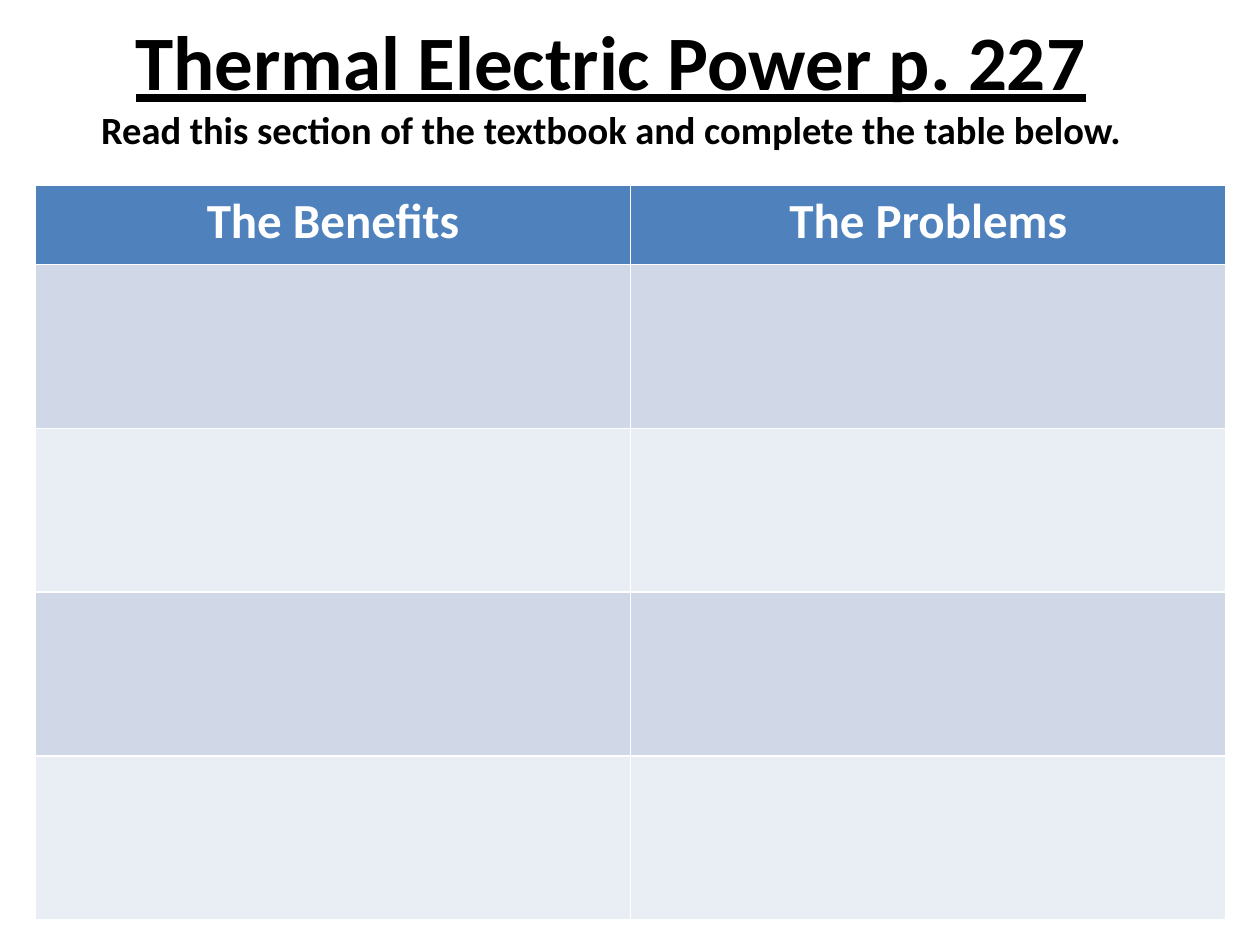
from pptx import Presentation
from pptx.dml.color import RGBColor
from pptx.enum.text import MSO_ANCHOR, MSO_AUTO_SIZE, PP_ALIGN
from pptx.util import Inches, Pt

COLORS = {
    "text": "000000",
    "header": "4F81BD",
    "header_text": "FFFFFF",
    "band_dark": "D0D8E8",
    "band_light": "E9EDF4",
}
HEADINGS = ["The Benefits", "The Problems"]
BLANK_ROWS = 4


def add_text(paragraph, text, size, color="text", underline=False):
    paragraph.alignment = PP_ALIGN.CENTER
    run = paragraph.add_run()
    run.text = text
    font = run.font
    font.name = "Calibri"
    font.size = Pt(size)
    font.bold = True
    font.underline = underline
    font.color.rgb = RGBColor.from_string(COLORS[color])


def fill_cell(cell, color):
    cell.fill.solid()
    cell.fill.fore_color.rgb = RGBColor.from_string(COLORS[color])


prs = Presentation()
prs.slide_width, prs.slide_height = Inches(10), Inches(7.5)
slide = prs.slides.add_slide(prs.slide_layouts[5])

# Title with the reading instruction on its second line
title = slide.shapes.title
title.left, title.top = Inches(0.35), Inches(0)
title.width, title.height = Inches(9), Inches(1.31)
title_frame = title.text_frame
title_frame.auto_size = MSO_AUTO_SIZE.NONE
title_frame.vertical_anchor = MSO_ANCHOR.MIDDLE
heading = title_frame.paragraphs[0]
add_text(heading, "Thermal Electric Power p. 227", size=44, underline=True)
heading.add_line_break()
add_text(heading, "Read this section of the textbook and complete the table below.", size=22)

# Table to be filled in; its default style draws the white cell borders
worksheet = slide.shapes.add_table(
    BLANK_ROWS + 1, len(HEADINGS),
    Inches(0.28), Inches(1.47), Inches(9.45), Inches(5.83),
).table
worksheet.rows[0].height = Inches(0.63)
for row in range(1, BLANK_ROWS + 1):
    worksheet.rows[row].height = Inches(1.3)

for col, label in enumerate(HEADINGS):
    header_cell = worksheet.cell(0, col)
    fill_cell(header_cell, "header")
    add_text(header_cell.text_frame.paragraphs[0], label, size=28, color="header_text")
    for row in range(1, BLANK_ROWS + 1):
        fill_cell(worksheet.cell(row, col), "band_dark" if row % 2 else "band_light")

prs.save("out.pptx")
